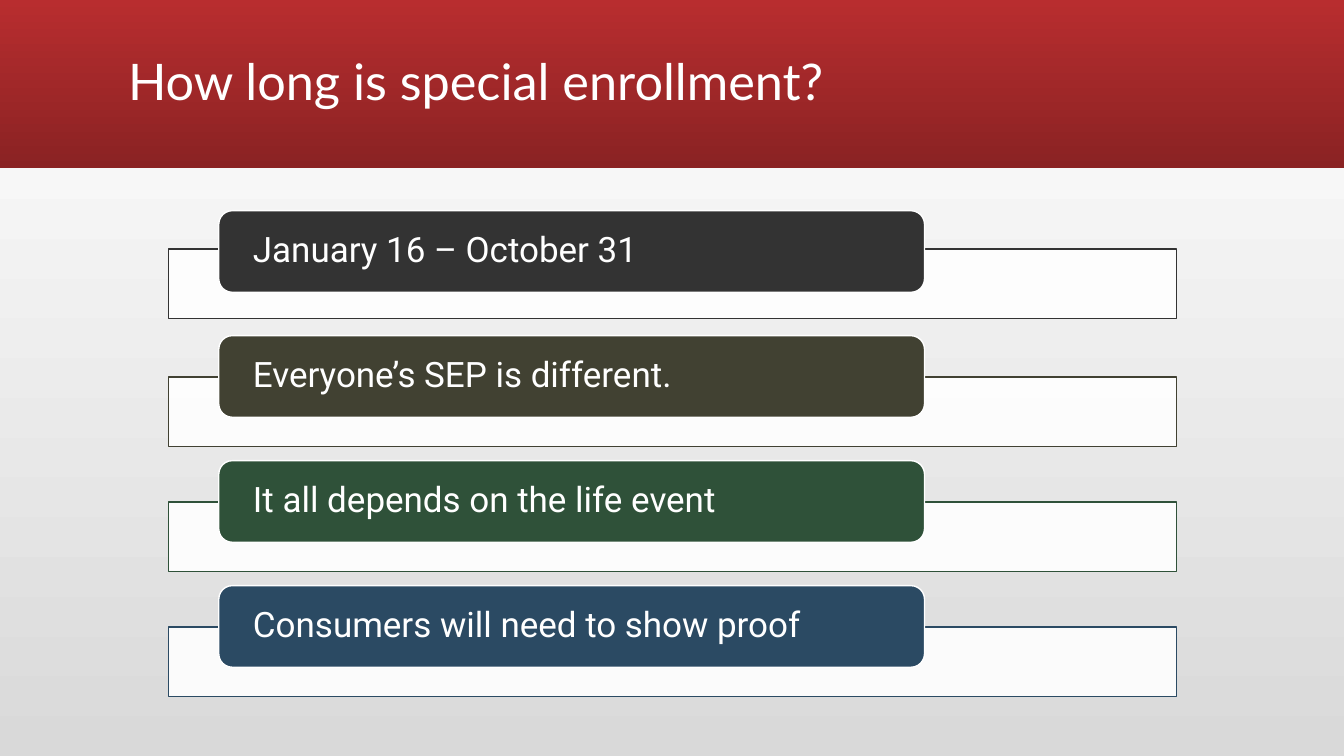
from lxml.etree import SubElement
from pptx import Presentation
from pptx.dml.color import RGBColor
from pptx.enum.shapes import MSO_SHAPE
from pptx.enum.text import MSO_ANCHOR, MSO_AUTO_SIZE, PP_ALIGN
from pptx.oxml.ns import qn
from pptx.util import Inches, Pt

WHITE = RGBColor(0xFF, 0xFF, 0xFF)
LIGHT_GREY = RGBColor(0xD9, 0xD9, 0xD9)
RED = RGBColor(0xB8, 0x2D, 0x2F)
DARK_RED = RGBColor(0x8A, 0x22, 0x23)
CHARCOAL = RGBColor(0x33, 0x33, 0x33)
OLIVE = RGBColor(0x41, 0x41, 0x32)
GREEN = RGBColor(0x2F, 0x51, 0x39)
BLUE = RGBColor(0x2B, 0x4A, 0x63)

# Statement, colour, drop from the label's top to the bar's top
STATEMENTS = [
    ("January 16 – October 31", CHARCOAL, 0.38),
    ("Everyone’s SEP is different.", OLIVE, 0.41),
    ("It all depends on the life event", GREEN, 0.41),
    ("Consumers will need to show proof", BLUE, 0.41),
]
FIRST_TOP = 2.09
ROW_PITCH = 1.24

FRAME_FORMAT = {
    "word_wrap": True,
    "auto_size": MSO_AUTO_SIZE.NONE,
    "vertical_anchor": MSO_ANCHOR.MIDDLE,
}
PARAGRAPH_FORMAT = {"alignment": PP_ALIGN.LEFT, "line_spacing": 0.9}
TITLE_FONT = {"name": "Lato", "size": Pt(36)}
LABEL_FONT = {"name": "Roboto", "size": Pt(25)}
LABEL_INSETS = {
    "margin_left": Inches(0.3),
    "margin_right": Inches(0.3),
    "margin_top": 0,
    "margin_bottom": 0,
}


def set_attributes(target, values):
    for attribute, value in values.items():
        setattr(target, attribute, value)


def fill_gradient(fill, start, end, angle):
    fill.gradient()
    fill.gradient_angle = angle
    for stop, color in zip(fill.gradient_stops, (start, end)):
        stop.color.rgb = color


def write_text(frame, text, font):
    set_attributes(frame, FRAME_FORMAT)
    frame.text = text
    paragraph = frame.paragraphs[0]
    set_attributes(paragraph, PARAGRAPH_FORMAT)
    set_attributes(paragraph.font, font)
    paragraph.font.color.rgb = WHITE


def add_box(slide, preset, left, top, width, height, fill, line):
    box = slide.shapes.add_shape(
        preset, Inches(left), Inches(top), Inches(width), Inches(height))
    box.shadow.inherit = False
    box.fill.solid()
    box.fill.fore_color.rgb = fill
    box.line.color.rgb = line
    box.line.width = Pt(1)
    return box


def add_banner(slide, width):
    banner = slide.shapes.add_shape(
        MSO_SHAPE.RECTANGLE, 0, 0, width, Inches(1.67))
    banner.shadow.inherit = False
    fill_gradient(banner.fill, RED, DARK_RED, 270)
    banner.line.fill.background()
    # Send the banner behind the title
    slide.shapes._spTree.insert(2, banner._element)


def add_title(slide, text):
    title = slide.shapes.title
    set_attributes(title, {
        "left": Inches(1.17),
        "top": Inches(0.11),
        "width": Inches(11),
        "height": Inches(1.45),
    })
    write_text(title.text_frame, text, TITLE_FONT)


def add_statement(slide, top, text, color, bar_drop):
    # Translucent bar behind the label
    bar = add_box(slide, MSO_SHAPE.RECTANGLE,
                  1.67, top + bar_drop, 10, 0.69, WHITE, color)
    bar_color = bar._element.spPr.find(qn("a:solidFill"))[0]
    SubElement(bar_color, qn("a:alpha"), val="90000")

    # Rounded label
    label = add_box(slide, MSO_SHAPE.ROUNDED_RECTANGLE,
                    2.17, top, 7, 0.81, color, WHITE)
    set_attributes(label.text_frame, LABEL_INSETS)
    write_text(label.text_frame, text, LABEL_FONT)


def main():
    deck = Presentation()
    deck.slide_width = Inches(13.33)
    deck.slide_height = Inches(7.5)
    slide = deck.slides.add_slide(deck.slide_layouts.get_by_name("Title Only"))

    # Background and heading
    fill_gradient(slide.background.fill, LIGHT_GREY, WHITE, 90)
    add_banner(slide, deck.slide_width)
    add_title(slide, "How long is special enrollment?")

    # Stacked statements
    for row, (text, color, bar_drop) in enumerate(STATEMENTS):
        add_statement(slide, FIRST_TOP + row * ROW_PITCH, text, color, bar_drop)

    deck.save("out.pptx")


if __name__ == "__main__":
    main()
